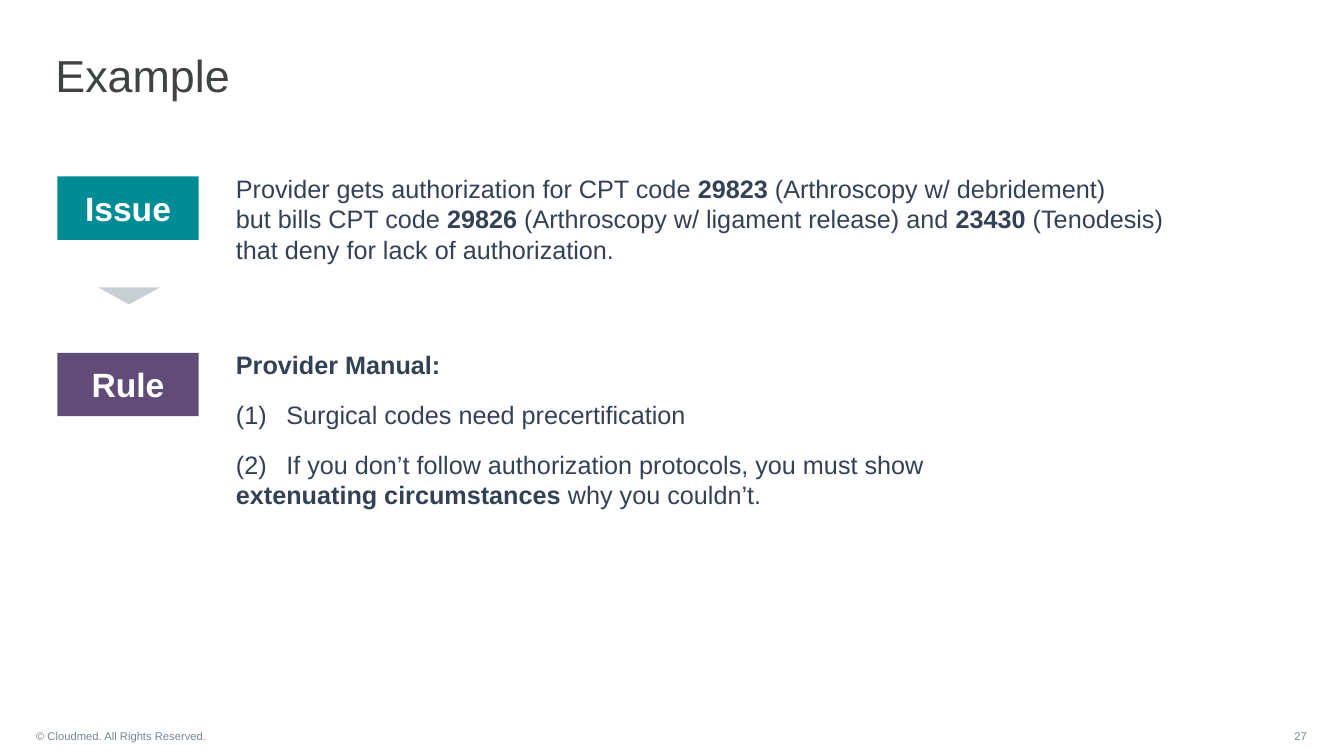
from dataclasses import dataclass

from lxml.etree import SubElement
from pptx import Presentation
from pptx.dml.color import RGBColor
from pptx.enum.shapes import MSO_SHAPE
from pptx.enum.text import MSO_ANCHOR, MSO_AUTO_SIZE, PP_ALIGN
from pptx.oxml.ns import qn
from pptx.shapes.base import BaseShape
from pptx.slide import Slide
from pptx.text.text import TextFrame, _Paragraph
from pptx.util import Emu, Pt

PX = 9144  # EMU per px, 100 px to the inch
TWO_CONTENT = 3
TAB_STOP = 44
COLORS = {
    "title": "3F4443",
    "body": "334157",
    "footer": "768692",
    "label": "FFFFFF",
    "issue": "008C95",
    "rule": "614B78",
    "arrow": "C8CFD3",
}
FORMATS = {
    "title": {"size": Pt(32), "bold": False},
    "body": {"size": Pt(18), "bold": False},
    "footer": {"size": Pt(8), "bold": False},
    "label": {"size": Pt(24), "bold": True},
}


@dataclass
class Box:
    left: int
    top: int
    width: int
    height: int

    def emu(self) -> tuple[Emu, ...]:
        return tuple(Emu(v * PX) for v in (self.left, self.top, self.width, self.height))


@dataclass
class Section:
    label: str
    color: str
    top: int
    body_height: int
    paragraphs: list[str]


@dataclass
class Footer:
    text: str
    box: Box
    align: PP_ALIGN


SECTIONS = [
    Section("Issue", "issue", 175, 101, [
        "Provider gets authorization for CPT code **29823** (Arthroscopy w/ debridement)\n"
        "but bills CPT code **29826** (Arthroscopy w/ ligament release) and "
        "**23430** (Tenodesis) that deny for lack of authorization.",
    ]),
    Section("Rule", "rule", 350, 171, [
        "**Provider Manual:**",
        "(1)\tSurgical codes need precertification",
        "(2)\tIf you don’t follow authorization protocols, you must show\n"
        "**extenuating circumstances** why you couldn’t.",
    ]),
]
FOOTERS = [
    Footer("© Cloudmed. All Rights Reserved.", Box(26, 710, 259, 40), PP_ALIGN.LEFT),
    Footer("27", Box(1242, 710, 64, 40), PP_ALIGN.RIGHT),
]


def add_run(p: _Paragraph, text: str, style: str, bold: bool = False) -> None:
    r = p.add_run()
    r.text = text
    r.font.name = "Arial"
    r.font.color.rgb = RGBColor.from_string(COLORS[style])
    for name, value in FORMATS[style].items():
        setattr(r.font, name, value)
    if bold:
        r.font.bold = True


def setup_frame(tf: TextFrame, anchor: MSO_ANCHOR) -> None:
    tf.word_wrap = True
    tf.auto_size = MSO_AUTO_SIZE.NONE
    tf.vertical_anchor = anchor


def place(sp: BaseShape, box: Box) -> None:
    sp.left, sp.top, sp.width, sp.height = box.emu()


def write_line(tf: TextFrame, text: str, style: str, align: PP_ALIGN,
               anchor: MSO_ANCHOR = MSO_ANCHOR.MIDDLE) -> _Paragraph:
    setup_frame(tf, anchor)
    p = tf.paragraphs[0]
    p.alignment = align
    add_run(p, text, style)
    return p


def write_marked(p: _Paragraph, text: str) -> None:
    """Write text where ** toggles bold and a newline is a line break."""
    for i, line in enumerate(text.split("\n")):
        if i:
            p.add_line_break()
            SubElement(p._p[-1], qn("a:rPr"), sz=str(int(FORMATS["body"]["size"].pt * 100)))
        for j, part in enumerate(line.split("**")):
            if part:
                add_run(p, part, "body", bold=j % 2 == 1)


def write_body(tf: TextFrame, paragraphs: list[str]) -> None:
    setup_frame(tf, MSO_ANCHOR.TOP)
    for i, text in enumerate(paragraphs):
        p = tf.add_paragraph() if i else tf.paragraphs[0]
        p.space_before = Pt(14 if i else 0)
        pPr = p._p.get_or_add_pPr()
        pPr.set("marL", "0")
        pPr.set("indent", "0")
        SubElement(pPr, qn("a:buNone"))
        if "\t" in text:
            tabs = SubElement(pPr, qn("a:tabLst"))
            SubElement(tabs, qn("a:tab"), pos=str(TAB_STOP * PX), algn="l")
        write_marked(p, text)


def add_filled(s: Slide, kind: MSO_SHAPE, box: Box, color: str) -> BaseShape:
    sp = s.shapes.add_shape(kind, *box.emu())
    sp.shadow.inherit = False
    sp.fill.solid()
    sp.fill.fore_color.rgb = RGBColor.from_string(COLORS[color])
    sp.line.fill.background()
    return sp


def main() -> None:
    prs = Presentation()
    prs.slide_width, prs.slide_height = Emu(1333 * PX), Emu(750 * PX)
    s = prs.slides.add_slide(prs.slide_layouts[TWO_CONTENT])

    title = s.shapes.title
    place(title, Box(45, 48, 997, 62))
    p = write_line(title.text_frame, "Example", "title", PP_ALIGN.LEFT, MSO_ANCHOR.TOP)
    p.line_spacing = 0.9

    for idx, section in enumerate(SECTIONS, start=1):
        body = s.placeholders[idx]
        place(body, Box(224, section.top - 8, 973, section.body_height))
        write_body(body.text_frame, section.paragraphs)
        label = add_filled(s, MSO_SHAPE.RECTANGLE, Box(57, section.top, 140, 63), section.color)
        write_line(label.text_frame, section.label, "label", PP_ALIGN.CENTER)

    arrow = add_filled(s, MSO_SHAPE.ISOSCELES_TRIANGLE, Box(97, 285, 62, 17), "arrow")
    arrow.rotation = 180

    for footer in FOOTERS:
        sp = s.shapes.add_textbox(*footer.box.emu())
        write_line(sp.text_frame, footer.text, "footer", footer.align)

    for sp in list(s.placeholders):
        if not sp.text_frame.text:
            sp.element.getparent().remove(sp.element)
    prs.save("out.pptx")


if __name__ == "__main__":
    main()
